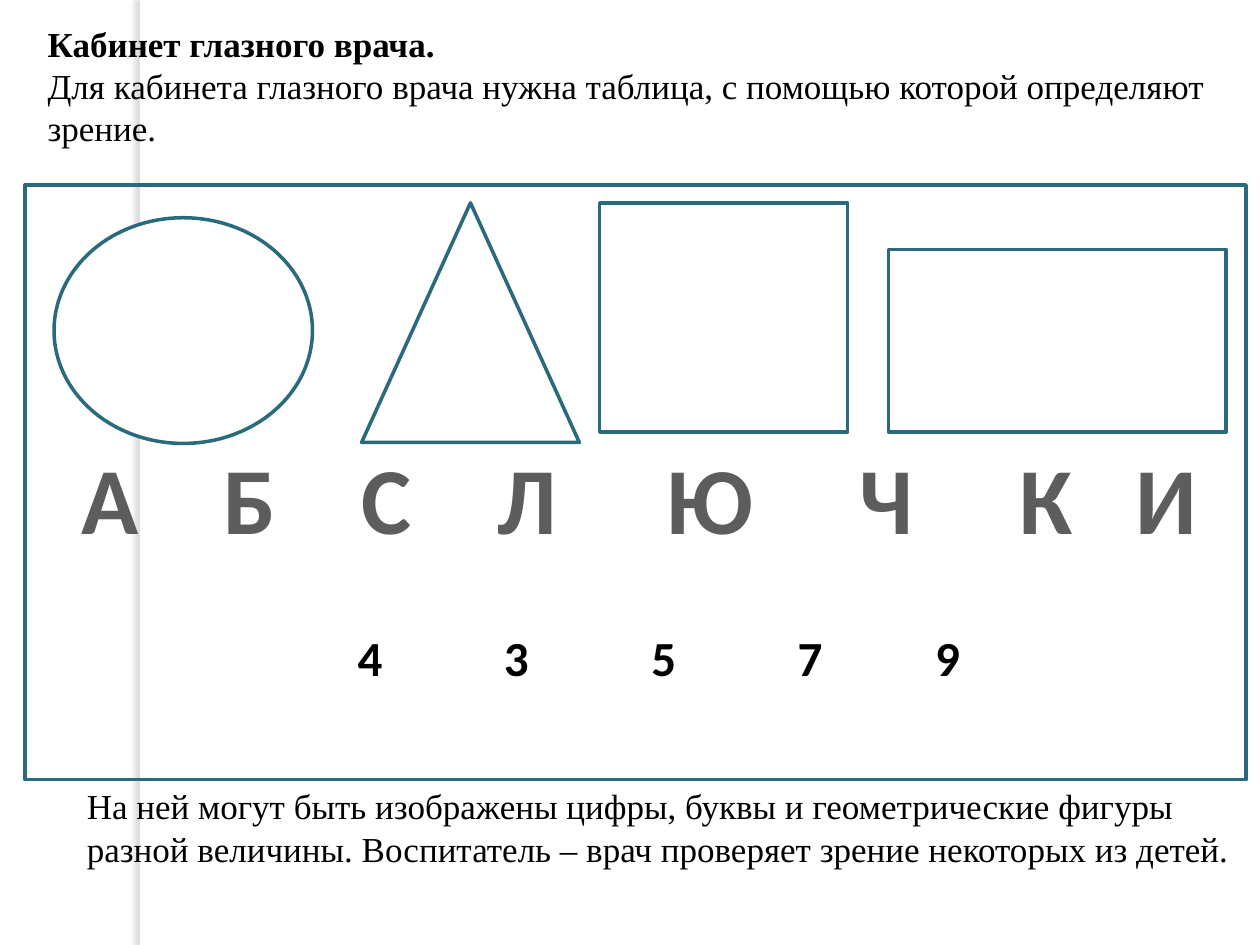
from dataclasses import dataclass

from lxml import etree
from pptx import Presentation
from pptx import util as u
from pptx.dml.color import RGBColor
from pptx.enum import shapes, text
from pptx.oxml import ns

TEAL = "296B7C"
WHITE = "FFFFFF"
BLACK = "000000"
SERIF = "Times New Roman"
SANS = "Calibri"


@dataclass(frozen=True)
class Box:
    left: float
    top: float
    width: float
    height: float

    def emu(self) -> tuple:
        return tuple(u.Cm(v) for v in (self.left, self.top, self.width, self.height))


@dataclass(frozen=True)
class Figure:
    kind: shapes.MSO_SHAPE
    box: Box
    fill: str | None = WHITE
    line: str | None = TEAL


@dataclass(frozen=True)
class ChartRow:
    symbols: str
    box: Box
    start: float
    stops: tuple
    size: int
    color: str


FIGURES = (
    Figure(shapes.MSO_SHAPE.RECTANGLE, Box(0.51, 3.73, 24.61, 11.99), fill=None),
    Figure(shapes.MSO_SHAPE.OVAL, Box(1.09, 4.39, 5.21, 4.55)),
    Figure(shapes.MSO_SHAPE.ISOSCELES_TRIANGLE, Box(7.29, 4.09, 4.39, 4.83)),
    Figure(shapes.MSO_SHAPE.RECTANGLE, Box(12.09, 4.09, 5, 4.62)),
    Figure(shapes.MSO_SHAPE.RECTANGLE, Box(17.91, 5.03, 6.81, 3.68)),
)

ROWS = (
    ChartRow("АБСЛЮЧКИ", Box(0.71, 8.74, 24.41, 2.57), 0.94,
             (3.38, 6.15, 8.97, 12.65, 16.21, 19.43, 21.87), 54, "5D5D5D"),
    ChartRow("43579", Box(3.1, 12.52, 21.01, 1.45), 4.11,
             (3.2, 6.17, 9.12, 11.89), 28, BLACK),
)


def rgb(value: str) -> RGBColor:
    return RGBColor.from_string(value)


def draw_figure(slide, figure: Figure):
    shape = slide.shapes.add_shape(figure.kind, *figure.box.emu())
    shape.shadow.inherit = False
    if figure.fill:
        shape.fill.solid()
        shape.fill.fore_color.rgb = rgb(figure.fill)
    else:
        shape.fill.background()
    if figure.line:
        shape.line.color.rgb = rgb(figure.line)
        shape.line.width = u.Pt(2)
    else:
        shape.line.fill.background()
    return shape


def draw_margin_strip(slide) -> None:
    strip = draw_figure(slide, Figure(
        shapes.MSO_SHAPE.RECTANGLE, Box(2.82, 0, 0.2, 19.05), line=None))
    effects = strip._element.spPr.find(ns.qn("a:effectLst"))
    shadow = etree.SubElement(effects, ns.qn("a:outerShdw"), blurRad=str(u.Pt(3)),
                              dist=str(u.Pt(3)), dir="10800000", algn="tl",
                              rotWithShape="0")
    color = etree.SubElement(shadow, ns.qn("a:srgbClr"), val="736F63")
    etree.SubElement(color, ns.qn("a:alpha"), val="25000")


def add_text(slide, box: Box, *lines: str, size: int = 20, font: str = SERIF,
             color: str = BLACK, bold: tuple = (), inset: float = 0.25):
    frame = slide.shapes.add_textbox(*box.emu()).text_frame
    frame.word_wrap = True
    frame.margin_left = u.Cm(inset)
    for index, line in enumerate(lines):
        paragraph = frame.paragraphs[0] if index == 0 else frame.add_paragraph()
        paragraph.alignment = text.PP_ALIGN.LEFT
        run = paragraph.add_run()
        run.text = line
        run.font.size = u.Pt(size)
        run.font.name = font
        run.font.bold = index in bold
        run.font.color.rgb = rgb(color)
    return frame


def draw_row(slide, row: ChartRow) -> None:
    frame = add_text(slide, row.box, "\t".join(row.symbols), size=row.size,
                     font=SANS, color=row.color, bold=(0,), inset=row.start)
    properties = frame.paragraphs[0]._p.get_or_add_pPr()
    tabs = etree.SubElement(properties, ns.qn("a:tabLst"))
    for stop in row.stops:
        etree.SubElement(tabs, ns.qn("a:tab"), pos=str(u.Cm(stop)), algn="ctr")


def main() -> None:
    deck = Presentation()
    deck.slide_width, deck.slide_height = u.Cm(25.4), u.Cm(19.05)
    slide = deck.slides.add_slide(deck.slide_layouts[6])
    draw_margin_strip(slide)
    add_text(slide, Box(0.71, 0.33, 24, 2.82),
             "Кабинет глазного врача.",
             "Для кабинета глазного врача нужна таблица, с помощью которой "
             "определяют зрение.", bold=(0,))
    add_text(slide, Box(1.5, 15.7, 23.6, 1.96),
             "На ней могут быть изображены цифры, буквы и геометрические фигуры "
             "разной величины. Воспитатель – врач проверяет зрение некоторых из детей.")
    for figure in FIGURES:
        draw_figure(slide, figure)
    for row in ROWS:
        draw_row(slide, row)
    deck.save("out.pptx")


if __name__ == "__main__":
    main()
